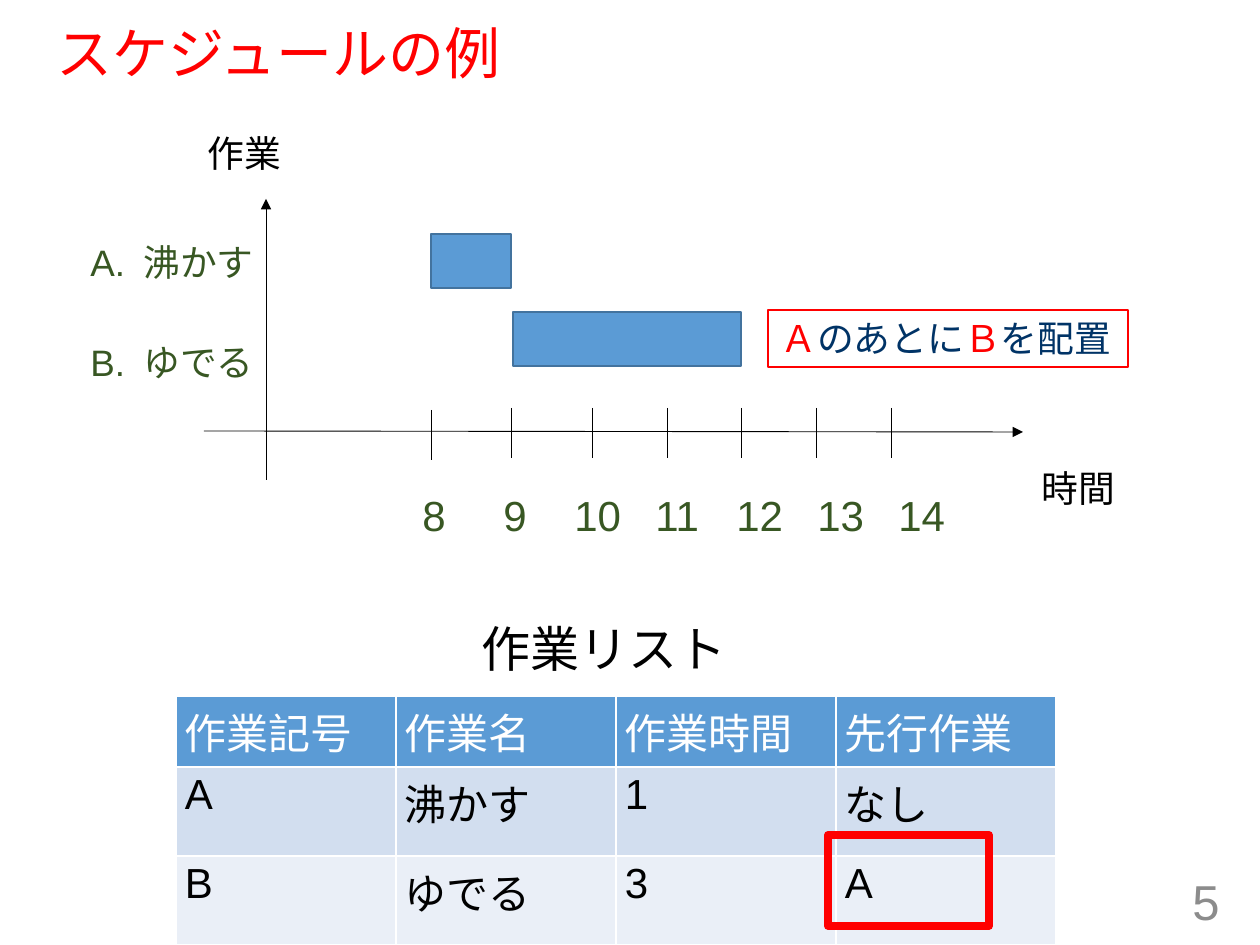
from lxml.etree import SubElement
from pptx import Presentation
from pptx.dml.color import RGBColor
from pptx.enum.shapes import MSO_CONNECTOR, MSO_SHAPE
from pptx.enum.text import MSO_ANCHOR, MSO_AUTO_SIZE, PP_ALIGN
from pptx.oxml.ns import qn
from pptx.util import Pt

PX = 914400 / 126
FONT = "Arial"
BLACK, WHITE, RED = "000000", "FFFFFF", "FF0000"
GREEN, NAVY, GRAY = "385723", "003366", "8C8C8C"
BLUE, EDGE = "5B9BD5", "43739E"

TITLE = "スケジュールの例"
LABELS = [
    ("時間", (1029, 460, 100, 57), 21, BLACK),
    ("作業", (195, 125, 100, 57), 21, BLACK),
    ("作業リスト", (469, 612, 273, 72), 28, BLACK),
]
TASKS = [("A.\t沸かす", 234), ("B.\tゆでる", 334)]
AXES = [(266, 480, 266, 199), (204, 431, 1023, 432)]
HOURS = range(8, 15)
TICKS = [431, 511, 592, 667, 741, 816, 891]
BARS = [(431, 234, 511), (513, 312, 741)]
NOTE = [("Ａ", RED), ("のあとに", NAVY), ("Ｂ", RED), ("を配置", NAVY)]
ROWS = [
    ("作業記号", "作業名", "作業時間", "先行作業"),
    ("A", "沸かす", "1", "なし"),
    ("B", "ゆでる", "3", "A"),
]
FILLS = [BLUE, "D2DEEF", "EAEFF7"]
HEIGHTS = [59, 89, 89]


def px(n):
    return round(n * PX)


def rgb(code):
    return RGBColor.from_string(code)


def write(frame, runs, size, color=BLACK, align=PP_ALIGN.LEFT,
          anchor=MSO_ANCHOR.TOP, wrap=False, tab=None, space=None):
    frame.word_wrap = wrap
    frame.auto_size = MSO_AUTO_SIZE.NONE
    frame.vertical_anchor = anchor
    para = frame.paragraphs[0]
    para.alignment = align
    if space:
        para.line_spacing = space
    if tab:
        tabs = SubElement(para._p.get_or_add_pPr(), qn("a:tabLst"))
        SubElement(tabs, qn("a:tab"), pos=str(px(tab)), algn="l")
    for text, tint in [(runs, color)] if isinstance(runs, str) else runs:
        run = para.add_run()
        run.text = text
        run.font.name = FONT
        run.font.size = Pt(size)
        run.font.bold = False
        run.font.color.rgb = rgb(tint)


def label(text, place, size, color, **style):
    box = slide.shapes.add_textbox(*map(px, place))
    write(box.text_frame, text, size, color, **style)


def rect(place, line, width, fill=None):
    shape = slide.shapes.add_shape(MSO_SHAPE.RECTANGLE, *map(px, place))
    shape.shadow.inherit = False
    if fill:
        shape.fill.solid()
        shape.fill.fore_color.rgb = rgb(fill)
    else:
        shape.fill.background()
    shape.line.color.rgb = rgb(line)
    shape.line.width = Pt(width)
    return shape


def rule(ends, arrow=False):
    line = slide.shapes.add_connector(MSO_CONNECTOR.STRAIGHT, *map(px, ends))
    line.line.color.rgb = rgb(BLACK)
    line.line.width = Pt(0.5)
    if arrow:
        SubElement(line.line._get_or_add_ln(), qn("a:tailEnd"), type="triangle")
    SubElement(line._element.spPr, qn("a:effectLst"))


deck = Presentation()
deck.slide_width, deck.slide_height = px(1260), px(945)
slide = deck.slides.add_slide(deck.slide_layouts[5])

title = slide.shapes.title
title.left, title.top, title.width, title.height = map(px, (44, 24, 1166, 64))
write(title.text_frame, TITLE, 32, RED, anchor=MSO_ANCHOR.MIDDLE,
      wrap=True, space=0.9)
label("5", (949, 876, 283, 50), 28, GRAY, align=PP_ALIGN.RIGHT,
      anchor=MSO_ANCHOR.MIDDLE, wrap=True)

for ends in AXES:
    rule(ends, arrow=True)
for text, top in TASKS:
    label(text, (78, top, 188, 57), 21, GREEN, tab=53)
for i, (hour, x) in enumerate(zip(HOURS, TICKS)):
    top = 410 if i == 0 else 408
    rule((x, top, x, top + 50))
    left, width = (410, 52) if hour < 10 else (400, 78)
    label(str(hour), (left + 81 * i, 483, width, 63), 24, GREEN)
for left, top, right in BARS:
    rect((left, top, right - left, 54), EDGE, 1, BLUE)
for item in LABELS:
    label(*item)

table = slide.shapes.add_table(
    len(ROWS), len(ROWS[0]), *map(px, (176, 696, 880, sum(HEIGHTS)))).table
for col in table.columns:
    col.width = px(220)
for r, (row, fill, high) in enumerate(zip(ROWS, FILLS, HEIGHTS)):
    table.rows[r].height = px(high)
    for c, text in enumerate(row):
        cell = table.cell(r, c)
        cell.fill.solid()
        cell.fill.fore_color.rgb = rgb(fill)
        cell.margin_left = cell.margin_right = px(9)
        cell.margin_top = cell.margin_bottom = px(5)
        write(cell.text_frame, text, 24, BLACK if r else WHITE, wrap=True)

note = rect((768, 310, 360, 57), RED, 0.75)
write(note.text_frame, NOTE, 21)
rect((828, 835, 161, 91), RED, 4.5)

deck.save("out.pptx")
